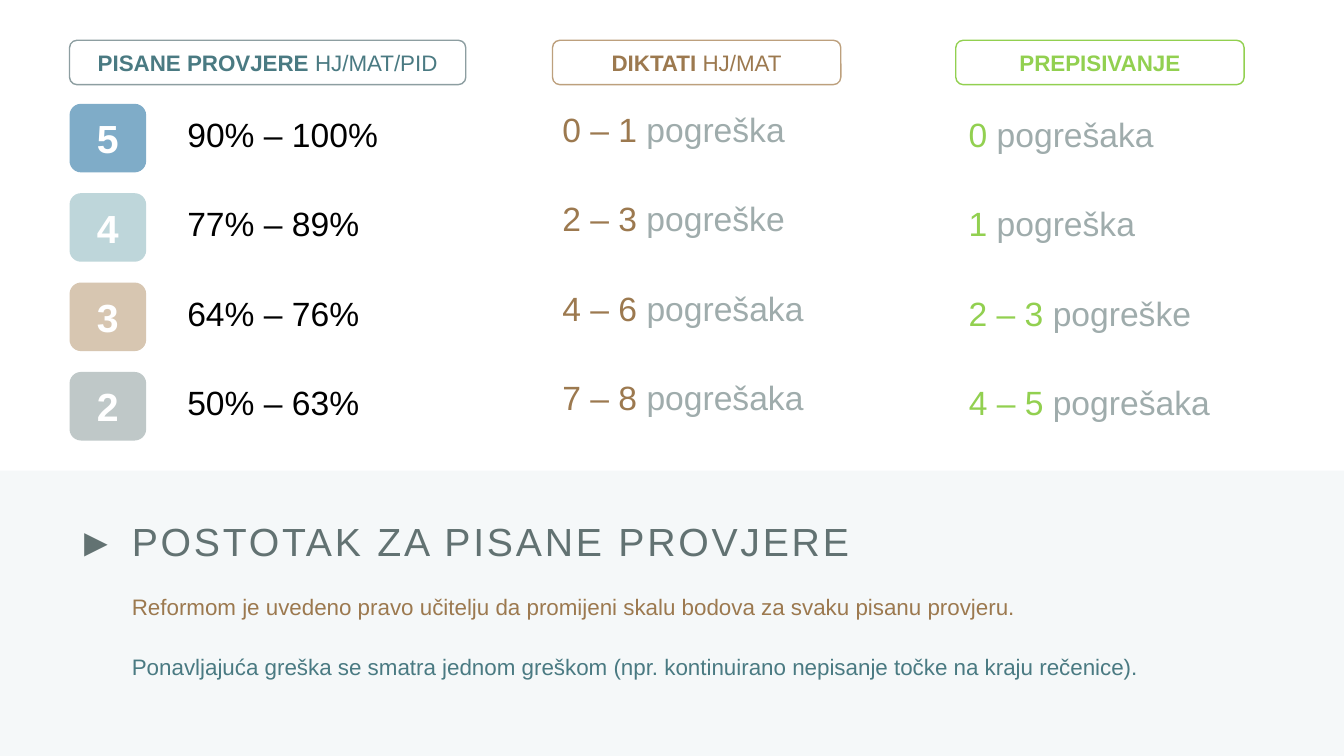
from lxml import etree
from pptx import Presentation
from pptx.dml.color import RGBColor
from pptx.enum.shapes import MSO_SHAPE
from pptx.enum.text import MSO_ANCHOR, MSO_AUTO_SIZE, PP_ALIGN
from pptx.oxml.ns import qn
from pptx.util import Inches, Pt

RECTANGLE, ROUNDED = MSO_SHAPE.RECTANGLE, MSO_SHAPE.ROUNDED_RECTANGLE
MIDDLE, TOP = MSO_ANCHOR.MIDDLE, MSO_ANCHOR.TOP
CENTER, LEFT = PP_ALIGN.CENTER, PP_ALIGN.LEFT
GROW, FIXED = MSO_AUTO_SIZE.SHAPE_TO_FIT_TEXT, MSO_AUTO_SIZE.NONE

THEME = {
    "font": "Arial",
    "heading": 28, "score": 24, "label": 16,
    "white": "FFFFFF", "black": "000000", "band": "BED6DA", "title": "627272",
    "teal": "4A7A82", "brown": "9C794F", "green": "92D050", "grey": "9FACAC",
    "teal_line": "8D9EA1", "brown_line": "BDA07D",
}

TITLE = "► POSTOTAK ZA PISANE PROVJERE"
GRADES = [("5", "7FACC8"), ("4", "BED6DA"), ("3", "D7C6B1"), ("2", "BFC8C8")]
COLUMNS = [
    {"header": ("PISANE PROVJERE ", "HJ/MAT/PID"), "header_box": (0.69, 3.93),
     "color": "teal", "line": "teal_line", "score_color": "black",
     "score_at": (1.76, 1.08),
     "scores": [("90% – 100%", "", 2.11), ("77% – 89%", "", 1.93),
                ("64% – 76%", "", 1.93), ("50% – 63%", "", 1.93)]},
    {"header": ("DIKTATI ", "HJ/MAT"), "header_box": (5.48, 2.86),
     "color": "brown", "line": "brown_line", "score_color": "brown",
     "score_at": (5.48, 1.03),
     "scores": [("0 – 1 ", "pogreška", 2.43), ("2 – 3 ", "pogreške", 2.43),
                ("4 – 6 ", "pogrešaka", 2.62), ("7 – 8 ", "pogrešaka", 2.62)]},
    {"header": ("PREPISIVANJE", ""), "header_box": (9.48, 2.86),
     "color": "green", "line": "green", "score_color": "green",
     "score_at": (9.51, 1.08),
     "scores": [("0 ", "pogrešaka", 2.06), ("1 ", "pogreška", 1.87),
                ("2 – 3 ", "pogreške", 2.43), ("4 – 5 ", "pogrešaka", 2.62)]},
]
NOTES = [
    ("Reformom je uvedeno pravo učitelju da promijeni skalu bodova za svaku pisanu provjeru.",
     "brown", 5.84, 9.07),
    ("Ponavljajuća greška se smatra jednom greškom (npr. kontinuirano nepisanje točke na kraju rečenice).",
     "teal", 6.43, 10.3),
]
GRADES_TOP = 1.03
ROW_PITCH = (3.69 - GRADES_TOP) / 3


def rgb(color):
    return RGBColor.from_string(THEME.get(color, color))


def apply(target, values):
    for name, value in values.items():
        setattr(target, name, value)


def write(frame, runs, size, align=LEFT, **frame_format):
    apply(frame, frame_format)
    paragraph = frame.paragraphs[0]
    paragraph.alignment = align
    for text, color, bold in runs:
        if text:
            run = paragraph.add_run()
            run.text = text
            apply(run.font, {"name": THEME["font"], "size": Pt(THEME[size]), "bold": bold})
            run.font.color.rgb = rgb(color)
    return paragraph


def add_panel(slide, preset, box, fill, line=None):
    panel = slide.shapes.add_shape(preset, *map(Inches, box))
    panel.shadow.inherit = False
    panel.fill.solid()
    panel.fill.fore_color.rgb = rgb(fill)
    if line:
        panel.line.color.rgb = rgb(line)
        panel.line.width = Pt(1)
    else:
        panel.line.fill.background()
    return panel


def add_label(slide, box, runs, size):
    label = slide.shapes.add_textbox(*map(Inches, box))
    write(label.text_frame, runs, size,
          word_wrap=False, auto_size=GROW, vertical_anchor=TOP)


def add_title(slide):
    title = slide.shapes.title
    apply(title, {"left": Inches(0.47), "top": Inches(4.99),
                  "width": Inches(8.25), "height": Inches(0.8)})
    heading = write(title.text_frame, [(TITLE, "title", False)], "heading", CENTER,
                    word_wrap=True, auto_size=FIXED, vertical_anchor=MIDDLE)
    heading.line_spacing = 0.9
    heading.runs[0].font._element.set("spc", "200")
    band = add_panel(slide, RECTANGLE, (0, 4.67, 13.33, 2.83), "band")
    band_color = band._element.spPr.find(qn("a:solidFill"))[0]
    etree.SubElement(band_color, qn("a:alpha")).set("val", "15000")
    title._element.addprevious(band._element)


def add_grades(slide):
    for row, (grade, fill) in enumerate(GRADES):
        tile = add_panel(slide, ROUNDED, (0.69, GRADES_TOP + row * ROW_PITCH, 0.76, 0.68), fill)
        write(tile.text_frame, [(grade, "white", True)], "heading", CENTER,
              vertical_anchor=MIDDLE)


def add_column(slide, column):
    left, width = column["header_box"]
    header = add_panel(slide, ROUNDED, (left, 0.4, width, 0.44), "white", column["line"])
    subject, classes = column["header"]
    write(header.text_frame,
          [(subject, column["color"], True), (classes, column["color"], False)],
          "label", CENTER, vertical_anchor=MIDDLE)
    left, top = column["score_at"]
    for row, (score, unit, width) in enumerate(column["scores"]):
        add_label(slide, (left, top + row * ROW_PITCH, width, 0.5),
                  [(score, column["score_color"], False), (unit, "grey", False)], "score")


def main():
    deck = Presentation()
    deck.slide_width, deck.slide_height = Inches(13.33), Inches(7.5)
    slide = deck.slides.add_slide(deck.slide_layouts[5])
    add_title(slide)
    add_grades(slide)
    for column in COLUMNS:
        add_column(slide, column)
    for note, color, top, width in NOTES:
        add_label(slide, (1.21, top, width, 0.37), [(note, color, False)], "label")
    deck.save("out.pptx")


if __name__ == "__main__":
    main()
